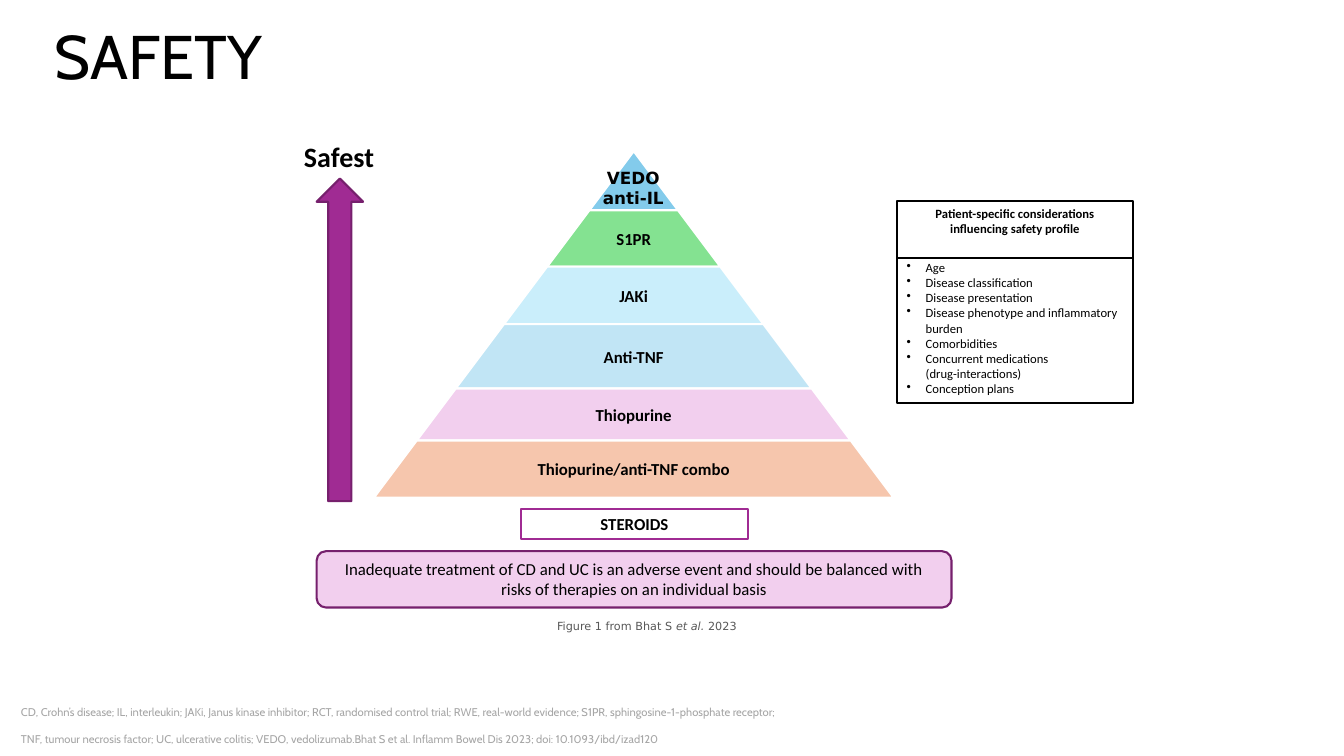
import pptx
import pptx.util
import pptx.dml.color
import pptx.enum.shapes
import pptx.enum.text
import lxml.etree

Cm, Pt = pptx.util.Cm, pptx.util.Pt
SHAPE = pptx.enum.shapes.MSO_SHAPE
ALIGN = pptx.enum.text.PP_ALIGN
ANCHOR = pptx.enum.text.MSO_ANCHOR
COLORS = {
    "black": "000000", "white": "FFFFFF", "grey": "A6A6A6", "caption": "585858",
    "purple": "A02B93", "plum": "76206D", "pink": "F2CFEE", "blue": "83CBEB",
    "green": "84E291", "ice": "CAEEFB", "sky": "C1E5F5", "peach": "F6C6AD",
}

prs = pptx.Presentation()
prs.slide_width, prs.slide_height = Cm(33.87), Cm(19.05)
s = prs.slides.add_slide(prs.slide_layouts[6])


def paint(sp, fill, line):
    sp.shadow.inherit = False
    if fill:
        sp.fill.solid()
        sp.fill.fore_color.rgb = pptx.dml.color.RGBColor.from_string(COLORS[fill])
    else:
        sp.fill.background()
    sp.line.color.rgb = pptx.dml.color.RGBColor.from_string(COLORS[line])
    sp.line.width = Pt(1.5)


def write(sp, lines, size, font="Calibri", color="black", bold=False,
          align=ALIGN.CENTER, anchor=ANCHOR.TOP):
    tf = sp.text_frame
    tf.word_wrap = True
    tf.vertical_anchor = anchor
    for i, line in enumerate(lines):
        p = tf.add_paragraph() if i else tf.paragraphs[0]
        p.text = line
        p.alignment = align
        p.font.size, p.font.name, p.font.bold = Pt(size), font, bold
        p.font.color.rgb = pptx.dml.color.RGBColor.from_string(COLORS[color])
    return tf.paragraphs


# Title
title = s.shapes.add_textbox(Cm(1.12), Cm(0.43), Cm(29.2), Cm(2.13))
write(title, ["SAFETY"], 44, "Cabin", align=ALIGN.LEFT,
      anchor=ANCHOR.MIDDLE)[0].line_spacing = 0.9

# Abbreviations and reference
footnote = s.shapes.add_textbox(Cm(0.28), Cm(17.7), Cm(24.87), Cm(1.05))
notes = write(footnote, [
    "CD, Crohn’s disease; IL, interleukin; JAKi, Janus kinase inhibitor; RCT, randomised control trial; "
    "RWE, real-world evidence; S1PR, sphingosine-1-phosphate receptor;",
    "TNF, tumour necrosis factor; UC, ulcerative colitis; VEDO, vedolizumab.Bhat S et al. "
    "Inflamm Bowel Dis 2023; doi: 10.1093/ibd/izad120",
], 8, "Cabin", "grey", align=ALIGN.LEFT)
for p in notes:
    p.line_spacing = 0.9
notes[1].space_before = Pt(10)

# Pyramid: every tier's half width grows with its distance from the apex
CENTER, APEX, SLOPE = 15.97, 3.81, 0.75
tiers = [
    (5.3, "blue", ""), (6.72, "green", "S1PR"), (8.17, "ice", "JAKi"),
    (9.79, "sky", "Anti-TNF"), (11.1, "pink", "Thiopurine"),
    (12.54, "peach", "Thiopurine/anti-TNF combo"),
]
top = APEX
for bottom, color, label in tiers:
    upper, lower = SLOPE * (top - APEX), SLOPE * (bottom - APEX)
    corners = [(CENTER - upper, top), (CENTER + upper, top),
               (CENTER + lower, bottom), (CENTER - lower, bottom)]
    points = [(Cm(x), Cm(y)) for x, y in corners]
    outline = s.shapes.build_freeform(*points[0])
    outline.add_line_segments(points[1:])
    tier = outline.convert_to_shape()
    paint(tier, color, "white")
    if label:
        write(tier, [label], 12, bold=True, anchor=ANCHOR.MIDDLE)
    top = bottom

apex_label = s.shapes.add_textbox(Cm(14.5), Cm(4.09), Cm(2.92), Cm(1.28))
write(apex_label, ["VEDO\vanti-IL"], 12, "DejaVu Sans", bold=True)

# Steroids box
steroids = s.shapes.add_shape(SHAPE.RECTANGLE, Cm(13.13), Cm(12.83), Cm(5.72), Cm(0.76))
paint(steroids, None, "purple")
write(steroids, ["STEROIDS"], 12, bold=True)

# Safety arrow
arrow = s.shapes.add_shape(SHAPE.UP_ARROW, Cm(7.98), Cm(4.5), Cm(1.17), Cm(8.13))
paint(arrow, "purple", "plum")
safest = s.shapes.add_textbox(Cm(6.6), Cm(3.4), Cm(3.89), Cm(1.12))
write(safest, ["Safest"], 20, bold=True)

# Key message
message = s.shapes.add_shape(SHAPE.ROUNDED_RECTANGLE, Cm(7.98), Cm(13.89), Cm(16), Cm(1.42))
paint(message, "pink", "plum")
write(message, ["Inadequate treatment of CD and UC is an adverse event and should be balanced "
                "with risks of therapies on an individual basis"], 12)

# Patient-specific considerations
panel = s.shapes.add_shape(SHAPE.RECTANGLE, Cm(22.6), Cm(5.06), Cm(5.95), Cm(5.1))
paint(panel, None, "black")
heading, *items = write(panel, [
    "Patient-specific considerations\vinfluencing safety profile",
    "Age", "Disease classification", "Disease presentation",
    "Disease phenotype and inflammatory burden", "Comorbidities",
    "Concurrent medications \v(drug-interactions)", "Conception plans",
], 9)
heading.font.bold = True
items[0].space_before = Pt(17)
for p in items:
    p.alignment = ALIGN.LEFT
    pPr = p._p.get_or_add_pPr()
    pPr.set("marL", str(Cm(0.48)))
    pPr.set("indent", str(-Cm(0.48)))
    bullet = lxml.etree.Element(pptx.oxml.ns.qn("a:buChar"), char="•")
    pPr.find(pptx.oxml.ns.qn("a:defRPr")).addprevious(bullet)

divider = s.shapes.add_connector(pptx.enum.shapes.MSO_CONNECTOR.STRAIGHT,
                                 Cm(22.6), Cm(6.49), Cm(28.55), Cm(6.49))
divider.line.color.rgb = pptx.dml.color.RGBColor.from_string(COLORS["black"])
divider.line.width = Pt(1.5)
lxml.etree.SubElement(divider._element.spPr, pptx.oxml.ns.qn("a:effectLst"))

# Figure credit
credit = s.shapes.add_textbox(Cm(13.79), Cm(15.47), Cm(8.79), Cm(0.58))
p = write(credit, ["Figure 1 from Bhat S "], 8, "DejaVu Sans", "caption", align=ALIGN.LEFT)[0]
r = p.add_run()
r.text, r.font.italic = "et al. ", True
p.add_run().text = "2023"

prs.save("out.pptx")
